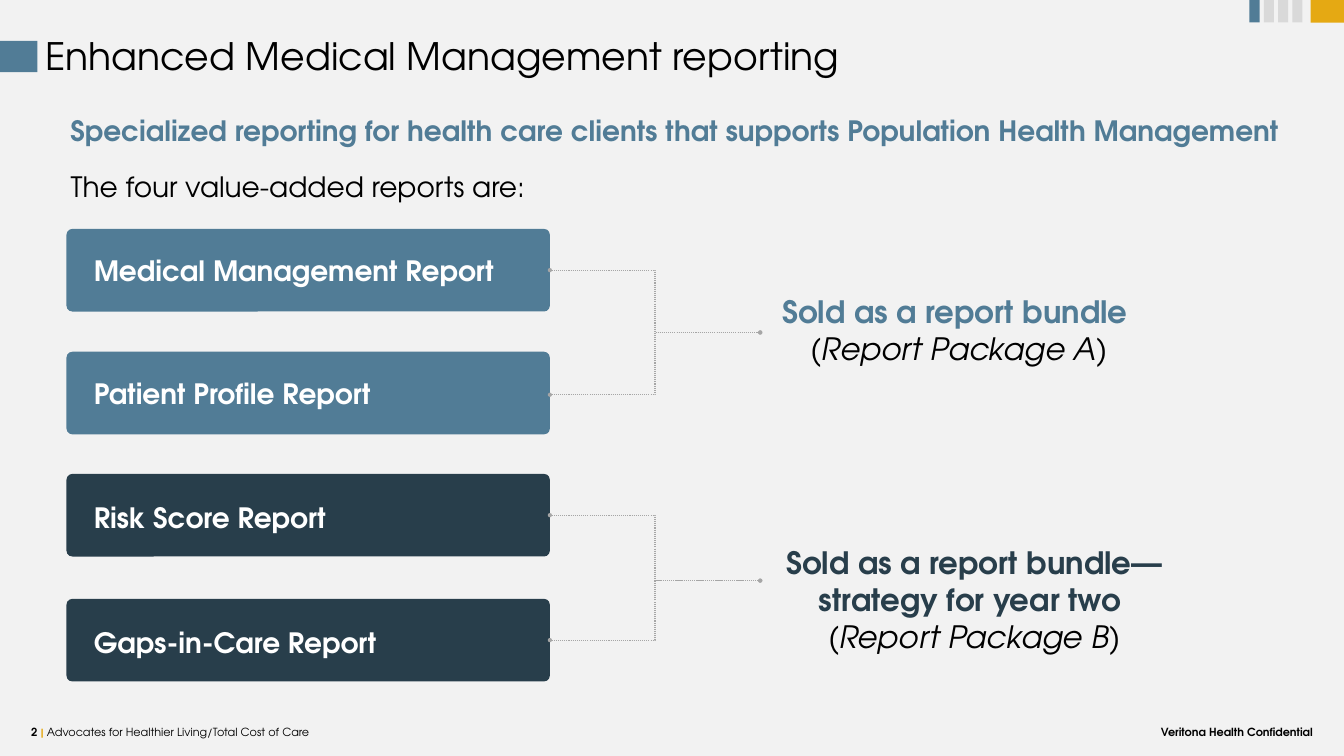
from dataclasses import dataclass

from lxml import etree
from pptx import Presentation
from pptx import util as u
from pptx.dml.color import RGBColor
from pptx.enum import dml, shapes, text
from pptx.oxml import ns


@dataclass(frozen=True)
class Theme:
    font: str = "TeX Gyre Adventor"
    paper: str = "F2F2F2"
    black: str = "000000"
    white: str = "FFFFFF"
    blue: str = "517C96"
    navy: str = "283E4B"
    gold: str = "E5A913"
    pale: str = "D9D9D9"
    grey: str = "A6A6A6"
    title: int = 54
    bundle: int = 44
    body: int = 40
    footer: int = 16


THEME = Theme()
CARD_LEFT, CARD_WIDTH, CARD_HEIGHT = 95, 690.5, 118
JOIN_X = 1086

# name, card top, label top, connector height
BUNDLES = [
    (THEME.blue, 475, [
        ("Medical Management Report", 327, 358, 386),
        ("Patient Profile Report", 502.5, 534, 564)]),
    (THEME.navy, 829.5, [
        ("Risk Score Report", 677, 711.5, 736),
        ("Gaps-in-Care Report", 855.5, 890, 914.5)]),
]


def color(value):
    return RGBColor.from_string(value)


def add_block(page, kind, left, top, width, height, fill):
    block = page.shapes.add_shape(
        kind, u.Pt(left), u.Pt(top), u.Pt(width), u.Pt(height))
    block.shadow.inherit = False
    block.fill.solid()
    block.fill.fore_color.rgb = color(fill)
    block.line.fill.background()
    return block


def add_span(para, words, size, ink, bold=False, italic=False):
    span = para.add_run()
    span.text = words
    span.font.name = THEME.font
    span.font.size = u.Pt(size)
    span.font.bold = bold
    span.font.italic = italic
    span.font.color.rgb = color(ink)


def add_text(page, left, top, width, height, align=text.PP_ALIGN.LEFT, inset=6):
    """Add an empty text box and return its first paragraph."""
    box = page.shapes.add_textbox(
        u.Pt(left), u.Pt(top), u.Pt(width), u.Pt(height))
    frame = box.text_frame
    frame.word_wrap = True
    frame.margin_left = frame.margin_right = u.Pt(inset)
    para = frame.paragraphs[0]
    para.alignment = align
    return para


def add_link(page, start_y, end_y):
    """Join a report card to its bundle with a dotted elbow."""
    link = page.shapes.add_connector(
        shapes.MSO_CONNECTOR.ELBOW, u.Pt(CARD_LEFT + CARD_WIDTH),
        u.Pt(start_y), u.Pt(JOIN_X), u.Pt(end_y))
    link.line.color.rgb = color(THEME.grey)
    link.line.width = u.Pt(1.5)
    link.line.dash_style = dml.MSO_LINE.ROUND_DOT
    outline = link.line._get_or_add_ln()
    for end in ("a:headEnd", "a:tailEnd"):
        etree.SubElement(outline, ns.qn(end), type="oval")
    etree.SubElement(link._element.spPr, ns.qn("a:effectLst"))


def add_report(page, name, card_top, label_top, fill):
    card = add_block(page, shapes.MSO_SHAPE.ROUNDED_RECTANGLE,
                     CARD_LEFT, card_top, CARD_WIDTH, CARD_HEIGHT, fill)
    card.adjustments[0] = 0.07
    para = add_text(page, 110, label_top, 755, 55.5)
    para._p.get_or_add_pPr().set("marL", str(u.Pt(18)))
    add_span(para, name, THEME.body, THEME.white, bold=True)


def add_bundle(page, left, top, width, heading, package, ink):
    para = add_text(page, left, top, width, 127.5, text.PP_ALIGN.CENTER)
    add_span(para, heading, THEME.bundle, ink, bold=True)
    para.add_line_break()
    add_span(para, package, THEME.bundle, THEME.black, italic=True)


def add_header(page):
    bar = shapes.MSO_SHAPE.RECTANGLE
    add_block(page, bar, 0, 58.5, 53.5, 44.5, THEME.blue)
    add_block(page, bar, 1872.5, 0, 47.5, 32.5, THEME.gold)
    for index, fill in enumerate([THEME.blue] + [THEME.pale] * 3):
        add_block(page, bar, 1785 + 20.4 * index, 0, 14.4, 32, fill)

    para = add_text(page, 62.5, 42.5, 1857, 84, inset=2)
    add_span(para, "Enhanced Medical Management reporting",
             THEME.title, THEME.black)
    para = add_text(page, 94.5, 158.5, 1752, 55.5)
    para.space_after = u.Pt(24)
    add_span(para, "Specialized reporting for health care clients that "
             "supports Population Health Management",
             THEME.body, THEME.blue, bold=True)
    para = add_text(page, 95, 238.5, 755, 55.5)
    add_span(para, "The four value-added reports are:",
             THEME.body, THEME.black)


def add_footer(page):
    para = add_text(page, 37.5, 1032, 745, 26.5, inset=7)
    add_span(para, "2 ", THEME.footer, THEME.black, bold=True)
    add_span(para, "| ", THEME.footer, THEME.gold, bold=True)
    add_span(para, "Advocates for Healthier Living/Total Cost of Care",
             THEME.footer, THEME.black)
    para = add_text(page, 1582.5, 1032, 300, 26.5,
                    text.PP_ALIGN.RIGHT, inset=7)
    add_span(para, "Veritona Health Confidential",
             THEME.footer, THEME.black, bold=True)


def main():
    deck = Presentation()
    deck.slide_width, deck.slide_height = u.Pt(1920), u.Pt(1080)
    page = deck.slides.add_slide(deck.slide_layouts[6])
    page.background.fill.solid()
    page.background.fill.fore_color.rgb = color(THEME.paper)

    add_footer(page)

    # Report cards and the links to their bundles
    for fill, join_y, reports in BUNDLES:
        for name, card_top, label_top, link_y in reports:
            add_report(page, name, card_top, label_top, fill)
            add_link(page, link_y, join_y)

    # Bundle descriptions
    add_bundle(page, 1029, 414.5, 683, "Sold as a report bundle ",
               "(Report Package A)", THEME.blue)
    add_bundle(page, 1044, 773.5, 696,
               "Sold as a report bundle—strategy for year two ",
               "(Report Package B)", THEME.navy)

    add_header(page)
    deck.save("out.pptx")


if __name__ == "__main__":
    main()
